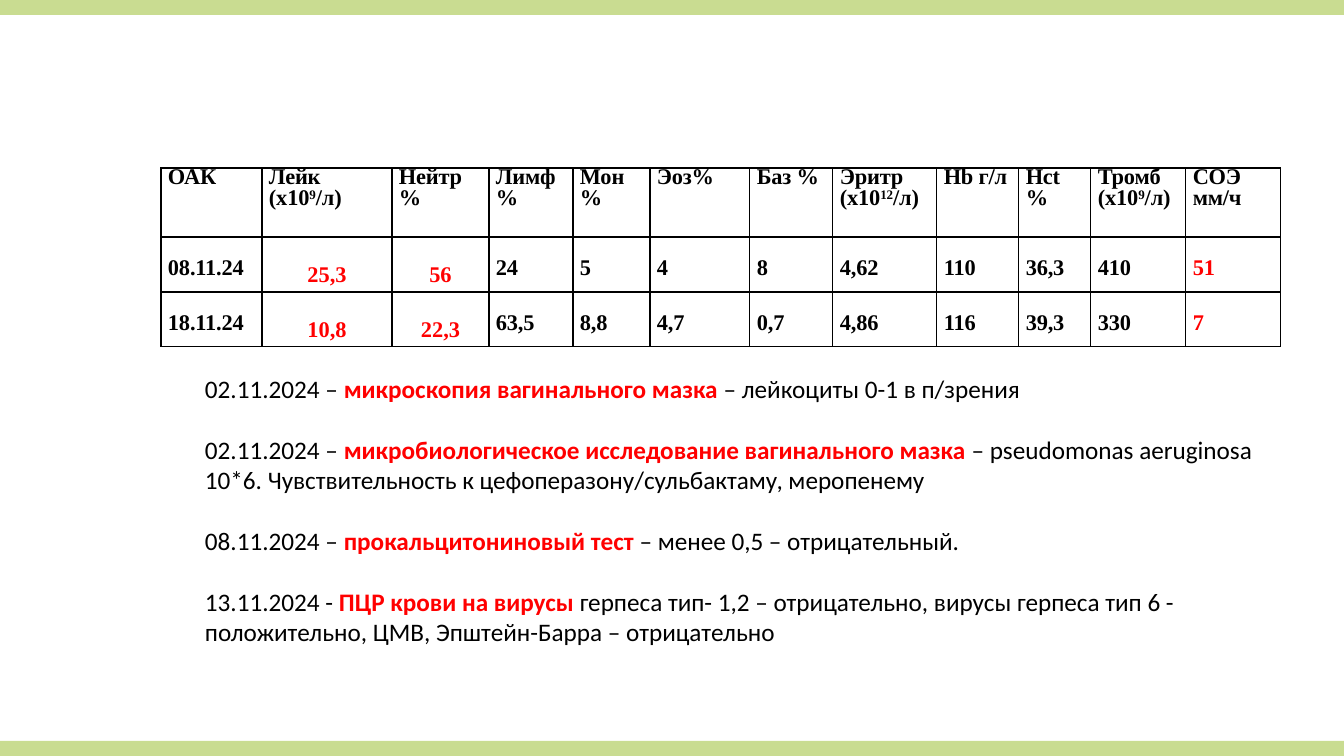
from typing import NamedTuple

from lxml import etree
from pptx import Presentation
from pptx import util as u
from pptx.dml.color import RGBColor
from pptx.enum import shapes, text
from pptx.oxml import ns

PX = 9071.43  # EMU in one px, at 100.8 px to the inch
WIDE, HIGH = 1344, 756
BAR = 15
GREEN = RGBColor(0xC9, 0xDC, 0x91)
BLACK = RGBColor(0, 0, 0)
RED = RGBColor(0xFF, 0, 0)

COLS = (101, 130, 97, 84, 77, 100, 83, 104, 82, 72, 95, 95)
ROWS = (69, 55, 55)
MID = {1, 2}  # centred columns
HOT = {1, 2, 11}  # columns with red values

# Every second part of a heading is a superscript.
HEADS = (
    ("ОАК",), ("Лейк (х10", "9", "/л)"), ("Нейтр%",), ("Лимф%",),
    ("Мон%",), ("Эоз%",), ("Баз %",), ("Эритр (х10", "12", "/л)"),
    ("Hb г/л",), ("Нct %",), ("Тромб (х10", "9", "/л)"), ("СОЭ мм/ч",),
)
TESTS = (
    "08.11.24 25,3 56 24 5 4 8 4,62 110 36,3 410 51".split(),
    "18.11.24 10,8 22,3 63,5 8,8 4,7 0,7 4,86 116 39,3 330 7".split(),
)


class Note(NamedTuple):
    date: str
    name: str
    found: str


NOTES = (
    Note("02.11.2024 – ", "микроскопия вагинального мазка ",
         "– лейкоциты 0-1 в п/зрения"),
    Note("02.11.2024 – ", "микробиологическое исследование вагинального мазка ",
         "– pseudomonas aeruginosa 10*6. Чувствительность к "
         "цефоперазону/сульбактаму, меропенему"),
    Note("08.11.2024 – ", "прокальцитониновый тест ",
         "– менее 0,5 – отрицательный."),
    Note("13.11.2024 - ", "ПЦР крови на вирусы",
         " герпеса тип- 1,2 – отрицательно, вирусы герпеса тип 6 - "
         "положительно, ЦМВ, Эпштейн-Барра – отрицательно"),
)


def emu(px: int) -> u.Emu:
    return u.Emu(round(px * PX))


def add_run(para, words: str, face: str, size: int, hue: RGBColor, bold: bool):
    run = para.add_run()
    run.text = words
    font = run.font
    font.name, font.size, font.bold = face, u.Pt(size), bold
    font.color.rgb = hue
    return run


def add_bar(slide, top: int) -> None:
    bar = slide.shapes.add_shape(
        shapes.MSO_SHAPE.RECTANGLE, 0, emu(top), emu(WIDE), emu(BAR))
    bar.shadow.inherit = False
    bar.fill.solid()
    bar.fill.fore_color.rgb = GREEN
    bar.line.fill.background()


def frame(cell) -> None:
    """Give a cell thin black borders and no fill."""
    props = cell._tc.get_or_add_tcPr()
    for side in ("lnL", "lnR", "lnT", "lnB"):
        line = etree.SubElement(props, ns.qn(f"a:{side}"), w=str(u.Pt(1)))
        fill = etree.SubElement(line, ns.qn("a:solidFill"))
        etree.SubElement(fill, ns.qn("a:srgbClr"), val=str(BLACK))
    cell.fill.background()


def fill_cell(cell, parts: tuple[str, ...], hue: RGBColor, mid: bool, drop: int) -> None:
    cell.margin_left = cell.margin_right = emu(7)
    cell.margin_top, cell.margin_bottom = emu(drop), 0
    frame(cell)
    para = cell.text_frame.paragraphs[0]
    if mid:
        para.alignment = text.PP_ALIGN.CENTER
    else:
        para.line_spacing = u.Pt(15.3)
    for i, part in enumerate(parts):
        run = add_run(para, part, "Times New Roman", 16, hue, True)
        props = run._r.get_or_add_rPr()
        if not mid:
            props.set("spc", "-10")
        if i % 2:
            props.set("baseline", "30000")


def add_tests(slide) -> None:
    grid = slide.shapes.add_table(
        len(ROWS), len(COLS), emu(161), emu(168),
        emu(sum(COLS)), emu(sum(ROWS))).table
    grid.first_row = grid.horz_banding = False
    for col, width in zip(grid.columns, COLS):
        col.width = emu(width)
    for row, height in zip(grid.rows, ROWS):
        row.height = emu(height)
    for c, parts in enumerate(HEADS):
        fill_cell(grid.cell(0, c), parts, BLACK, False, 0)
    for r, vals in enumerate(TESTS, 1):
        for c, val in enumerate(vals):
            mid = c in MID
            fill_cell(grid.cell(r, c), (val,), RED if c in HOT else BLACK,
                      mid, 26 if mid else 22)


def add_notes(slide) -> None:
    box = slide.shapes.add_textbox(emu(195), emu(368), emu(1079), emu(285))
    body = box.text_frame
    body.word_wrap = True
    body.auto_size = text.MSO_AUTO_SIZE.SHAPE_TO_FIT_TEXT
    for i, note in enumerate(NOTES):
        para = body.add_paragraph() if i else body.paragraphs[0]
        if i:
            para.space_before = u.Pt(22)
        add_run(para, note.date, "Calibri", 18, BLACK, False)
        add_run(para, note.name, "Calibri", 18, RED, True)
        add_run(para, note.found, "Calibri", 18, BLACK, False)


def main() -> None:
    deck = Presentation()
    deck.slide_width, deck.slide_height = emu(WIDE), emu(HIGH)
    slide = deck.slides.add_slide(deck.slide_layouts[6])
    for top in (0, HIGH - BAR):
        add_bar(slide, top)
    add_tests(slide)
    add_notes(slide)
    deck.save("out.pptx")


if __name__ == "__main__":
    main()
